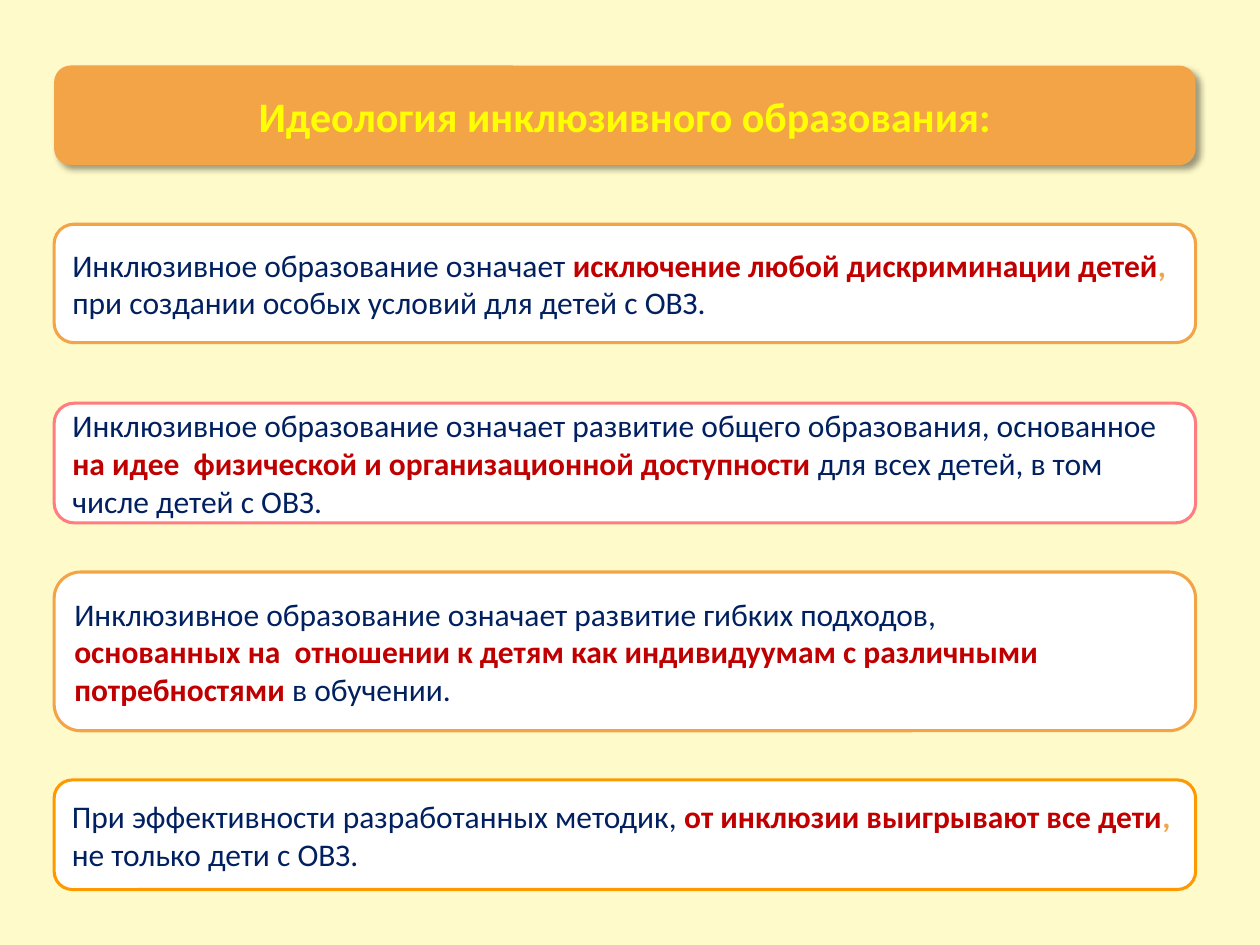
from lxml import etree
from pptx import Presentation
from pptx import util as u
from pptx.dml import color
from pptx.enum import shapes, text
from pptx.oxml import ns

THEME = {
    "background": "FEFAC9", "box": "FFFFFF", "orange": "F3A447",
    "pink": "FF7C80", "amber": "FF9900", "title": "FFFF00",
    "body": "002060", "accent": "C00000",
    "font": "Calibri", "title_size": 24, "body_size": 18, "line_width": 1.75,
}
LEFT, WIDTH = 0.43, 9.06

STYLES = {
    "title": {"size": u.Pt(THEME["title_size"]), "bold": True},
    "body": {"size": u.Pt(THEME["body_size"]), "bold": False},
    "accent": {"size": u.Pt(THEME["body_size"]), "bold": True},
    "orange": {"size": u.Pt(THEME["body_size"]), "bold": True},
}

BOXES = [
    (0.52, 0.79, "orange", None, [[("title", "Идеология инклюзивного образования:")]]),
    (1.78, 0.94, "box", "orange", [[
        ("body", "Инклюзивное образование означает "),
        ("accent", "исключение любой дискриминации детей"),
        ("orange", ", "),
        ("body", "при создании особых условий для детей с ОВЗ."),
    ]]),
    (3.2, 0.95, "box", "pink", [[
        ("body", "Инклюзивное образование означает развитие общего образования, основанное "),
        ("accent", "на идее  физической и организационной доступности "),
        ("body", "для всех детей, в том числе детей с ОВЗ."),
    ]]),
    (4.54, 1.26, "box", "orange", [
        [("body", "Инклюзивное образование означает развитие гибких подходов,")],
        [
            ("accent", "основанных на  отношении к детям как индивидуумам с различными потребностями "),
            ("body", "в обучении."),
        ],
    ]),
    (6.19, 0.87, "box", "amber", [[
        ("body", "При эффективности разработанных методик, "),
        ("accent", "от инклюзии выигрывают все дети"),
        ("orange", ", "),
        ("body", "не только дети с ОВЗ."),
    ]]),
]


def rgb(name):
    return color.RGBColor.from_string(THEME[name])


def add_shadow(shape):
    effects = shape._element.spPr.find(ns.qn("a:effectLst"))
    shadow = etree.SubElement(
        effects, ns.qn("a:outerShdw"), blurRad=str(u.Pt(4)), dist=str(u.Pt(3)),
        dir=str(45 * 60000), algn="tl", rotWithShape="0")
    tint = etree.SubElement(shadow, ns.qn("a:srgbClr"), val="000000")
    etree.SubElement(tint, ns.qn("a:alpha"), val="40000")


presentation = Presentation()
presentation.slide_width = u.Inches(10)
presentation.slide_height = u.Inches(7.5)
slide = presentation.slides.add_slide(presentation.slide_layouts[6])
slide.background.fill.solid()
slide.background.fill.fore_color.rgb = rgb("background")

for top, height, fill, outline, paragraphs in BOXES:
    shape = slide.shapes.add_shape(
        shapes.MSO_SHAPE.ROUNDED_RECTANGLE,
        u.Inches(LEFT), u.Inches(top), u.Inches(WIDTH), u.Inches(height))
    shape.shadow.inherit = False
    shape.fill.solid()
    shape.fill.fore_color.rgb = rgb(fill)
    if outline:
        shape.line.color.rgb = rgb(outline)
        shape.line.width = u.Pt(THEME["line_width"])
        alignment = text.PP_ALIGN.LEFT
    else:
        shape.line.fill.background()
        add_shadow(shape)
        alignment = text.PP_ALIGN.CENTER

    frame = shape.text_frame
    frame.word_wrap = True
    frame.vertical_anchor = text.MSO_ANCHOR.MIDDLE
    for index, runs in enumerate(paragraphs):
        paragraph = frame.add_paragraph() if index else frame.paragraphs[0]
        paragraph.alignment = alignment
        for style, wording in runs:
            run = paragraph.add_run()
            run.text = wording
            run.font.name = THEME["font"]
            run.font.color.rgb = rgb(style)
            for attribute, value in STYLES[style].items():
                setattr(run.font, attribute, value)

presentation.save("out.pptx")
